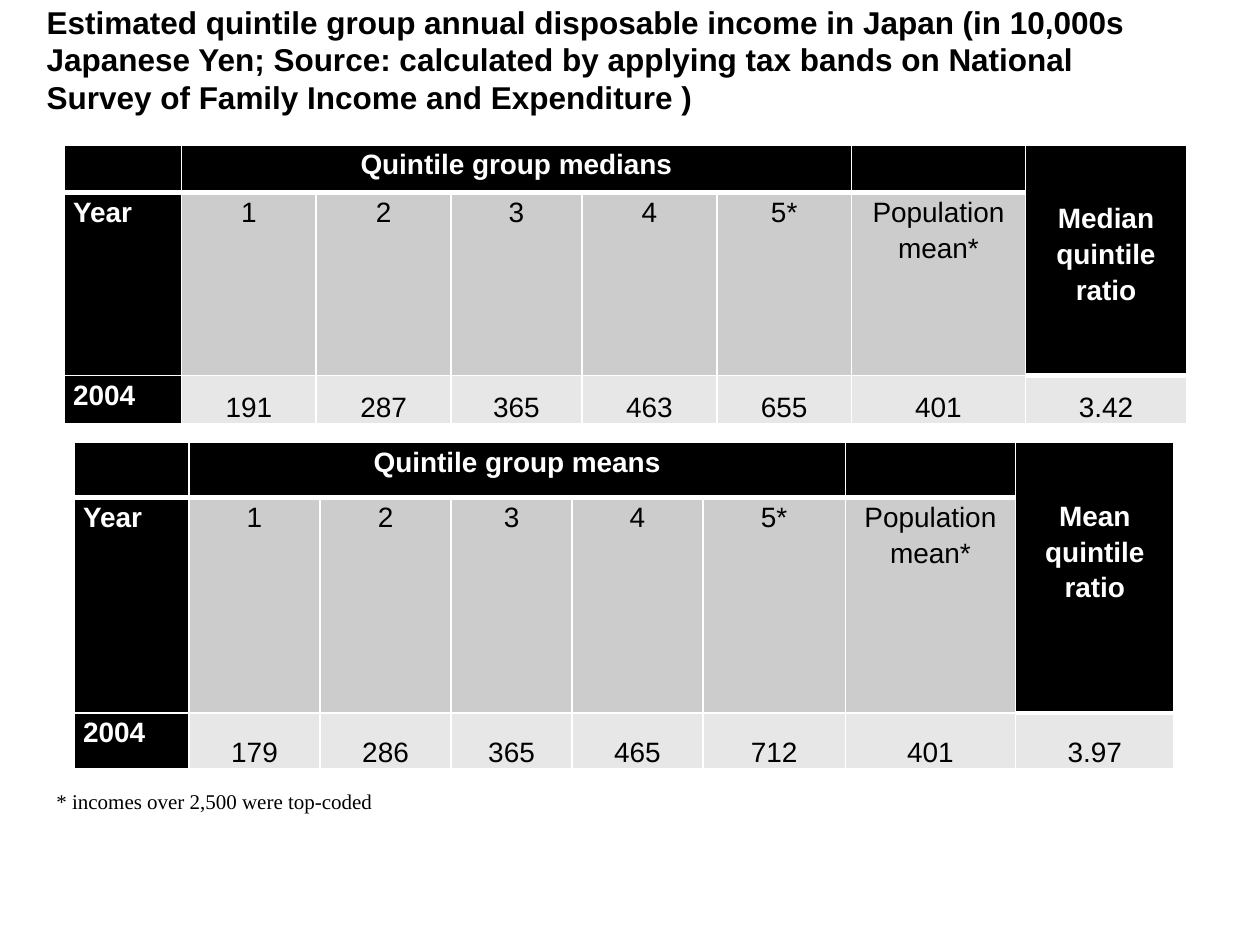
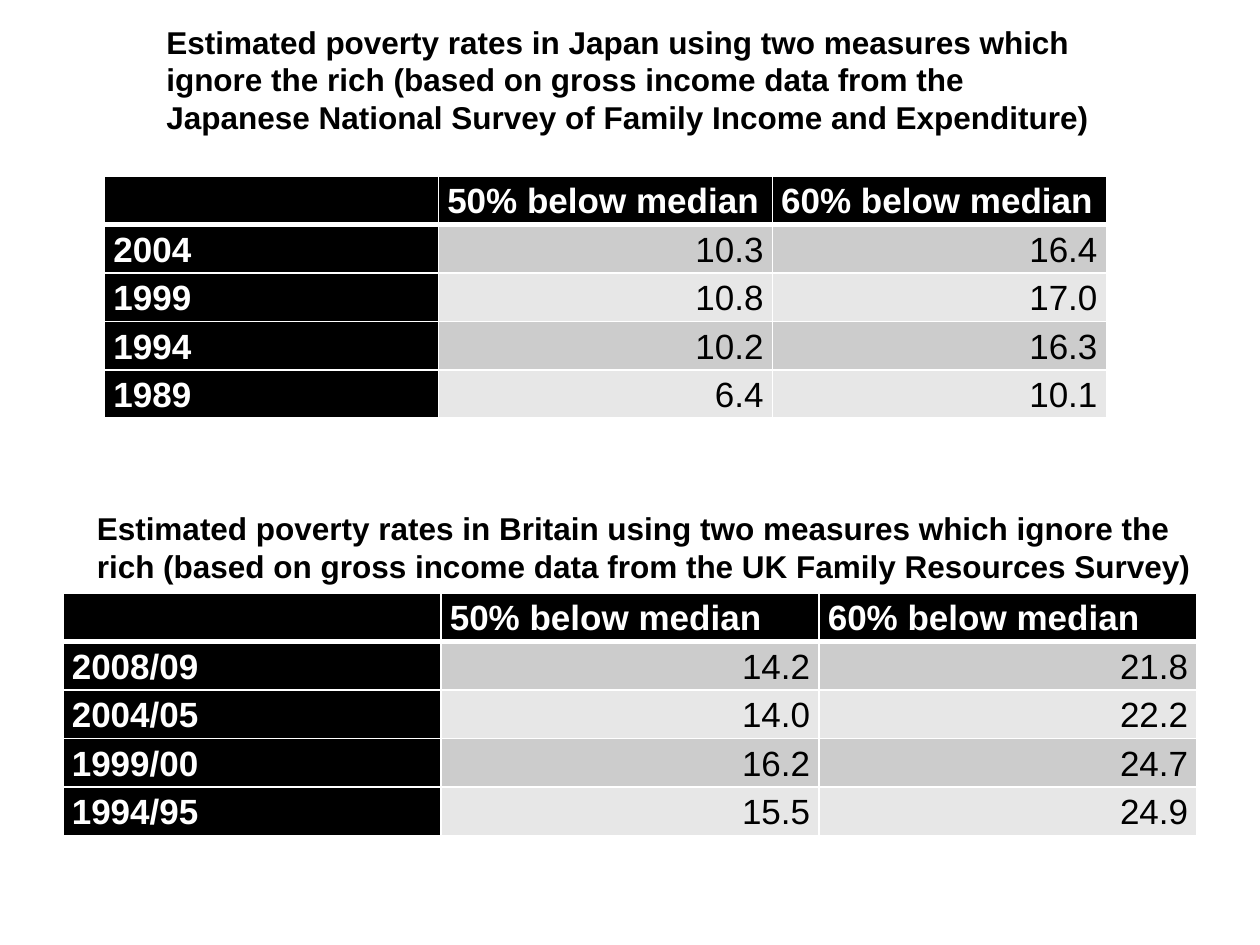
from lxml import etree
from pptx import Presentation
from pptx.dml.color import RGBColor
from pptx.enum import text
from pptx.oxml import ns
from pptx.util import Inches, Pt

BLACK = RGBColor(0x00, 0x00, 0x00)
WHITE = RGBColor(0xFF, 0xFF, 0xFF)
MID_GREY = RGBColor(0xCC, 0xCC, 0xCC)
PALE_GREY = RGBColor(0xE7, 0xE7, 0xE7)
LEFT, CENTER, RIGHT = text.PP_ALIGN.LEFT, text.PP_ALIGN.CENTER, text.PP_ALIGN.RIGHT
TOP, MIDDLE, BOTTOM = text.MSO_ANCHOR.TOP, text.MSO_ANCHOR.MIDDLE, text.MSO_ANCHOR.BOTTOM

INCOME_TITLE = (
    "Estimated quintile group annual disposable income in Japan (in 10,000s Japanese Yen; "
    "Source: calculated by applying tax bands on National Survey of Family Income and Expenditure )"
)
INCOME_NOTE = "* incomes over 2,500 were top-coded"
JAPAN_TITLE = (
    "Estimated poverty rates in Japan using two measures which ignore the rich (based on gross "
    "income data from the Japanese National Survey of Family Income and Expenditure)"
)
BRITAIN_TITLE = (
    "Estimated poverty rates in Britain using two measures which ignore the rich (based on gross "
    "income data from the UK Family Resources Survey)"
)

INCOME_COLUMNS = ["Year", "1", "2", "3", "4", "5*", "Population mean*", ""]
INCOME_TABLES = [
    {
        "measure": "Quintile group medians",
        "ratio": "Median quintile ratio",
        "values": ["2004", "191", "287", "365", "463", "655", "401", "3.42"],
        "at": (0.51, 1.15),
        "widths": [0.93, 1.07, 1.07, 1.04, 1.07, 1.07, 1.38, 1.28],
        "heights": [0.38, 1.45, 0.38],
    },
    {
        "measure": "Quintile group means",
        "ratio": "Mean quintile ratio",
        "values": ["2004", "179", "286", "365", "465", "712", "401", "3.97"],
        "at": (0.59, 3.51),
        "widths": [0.91, 1.04, 1.04, 0.96, 1.04, 1.13, 1.35, 1.26],
        "heights": [0.44, 1.71, 0.44],
    },
]

POVERTY_HEADER = ["", "50% below median", "60% below median"]
POVERTY_TABLES = [
    {
        "rows": [
            ("2004", "10.3", "16.4"),
            ("1999", "10.8", "17.0"),
            ("1994", "10.2", "16.3"),
            ("1989", "6.4", "10.1"),
        ],
        "at": (0.83, 1.4),
        "column_width": 2.65,
    },
    {
        "rows": [
            ("2008/09", "14.2", "21.8"),
            ("2004/05", "14.0", "22.2"),
            ("1999/00", "16.2", "24.7"),
            ("1994/95", "15.5", "24.9"),
        ],
        "at": (0.5, 4.71),
        "column_width": 3,
    },
]
POVERTY_ROW_HEIGHT = 0.38


def style_runs(para, size, color, bold, font="Arial"):
    for span in para.runs:
        span.font.name = font
        span.font.size = Pt(size)
        span.font.bold = bold
        span.font.color.rgb = color


def write_box(box, words, at, size=18, bold=True, font="Arial", anchor=TOP, wrap=True):
    box.left, box.top, box.width, box.height = map(Inches, at)
    frame = box.text_frame
    frame.text = words
    frame.word_wrap = wrap
    frame.auto_size = text.MSO_AUTO_SIZE.SHAPE_TO_FIT_TEXT
    frame.vertical_anchor = anchor
    para = frame.paragraphs[0]
    para.alignment = LEFT
    style_runs(para, size, BLACK, bold, font)


def add_text(page, words, at, **style):
    write_box(page.shapes.add_textbox(0, 0, 0, 0), words, at, **style)


def draw_borders(cell, top, bottom):
    properties = cell._tc.get_or_add_tcPr()
    for side, width in (("L", 1), ("R", 1), ("T", top), ("B", bottom)):
        line = etree.SubElement(properties, ns.qn(f"a:ln{side}"), w=str(Pt(width)))
        fill = etree.SubElement(line, ns.qn("a:solidFill"))
        etree.SubElement(fill, ns.qn("a:srgbClr"), val=str(WHITE))


def fill_cell(cell, words, fill, size, align, anchor=TOP, space_after=0, borders=(1, 1)):
    draw_borders(cell, *borders)
    cell.fill.solid()
    cell.fill.fore_color.rgb = fill
    cell.margin_left = cell.margin_right = Inches(0.07)
    cell.margin_top = cell.margin_bottom = 0
    cell.vertical_anchor = anchor
    cell.text_frame.text = words
    para = cell.text_frame.paragraphs[0]
    para.alignment = align
    para.line_spacing = 1.15
    para.space_after = Pt(space_after)
    dark = fill == BLACK
    style_runs(para, size, WHITE if dark else BLACK, dark)


def add_grid(page, at, widths, heights):
    size = (sum(widths), sum(heights))
    frame = page.shapes.add_table(len(heights), len(widths), *map(Inches, at + size))
    grid = frame.table
    for column, width in zip(grid.columns, widths):
        column.width = Inches(width)
    for row, height in zip(grid.rows, heights):
        row.height = Inches(height)
    return grid


def add_income_table(page, data):
    grid = add_grid(page, data["at"], data["widths"], data["heights"])
    last = len(INCOME_COLUMNS) - 1
    header = ["", data["measure"], "", "", "", "", "", data["ratio"]]
    for r, row in enumerate([header, INCOME_COLUMNS, data["values"]]):
        for c, words in enumerate(row):
            header_end = 1 if c == last else 0
            dark = r <= header_end or c == 0
            fill_cell(
                grid.cell(r, c),
                words,
                BLACK if dark else (MID_GREY, PALE_GREY)[r - 1],
                size=16,
                align=LEFT if c == 0 else CENTER,
                anchor=BOTTOM if r == 2 and c else TOP,
                space_after=10,
                borders=(3 if r == header_end + 1 else 1, 3 if r <= header_end else 1),
            )
    grid.cell(0, 1).merge(grid.cell(0, 5))
    grid.cell(0, last).merge(grid.cell(1, last))
    grid.cell(0, last).margin_top = Inches(0.43)


def add_poverty_table(page, data):
    rows = [POVERTY_HEADER] + data["rows"]
    widths = [data["column_width"]] * len(POVERTY_HEADER)
    grid = add_grid(page, data["at"], widths, [POVERTY_ROW_HEIGHT] * len(rows))
    for r, row in enumerate(rows):
        for c, words in enumerate(row):
            dark = r == 0 or c == 0
            fill_cell(
                grid.cell(r, c),
                words,
                BLACK if dark else (PALE_GREY, MID_GREY)[r % 2],
                size=20,
                align=LEFT if dark else RIGHT,
                borders=(3 if r == 1 else 1, 3 if r == 0 else 1),
            )


def add_page(deck, title, at):
    page = deck.slides.add_slide(deck.slide_layouts.get_by_name("Title Only"))
    write_box(page.shapes.title, title, at)
    return page


def main():
    deck = Presentation()
    deck.slide_width, deck.slide_height = Inches(10), Inches(7.5)

    income = add_page(deck, INCOME_TITLE, (0.27, -0.03, 8.98, 1.01))
    for data in INCOME_TABLES:
        add_income_table(income, data)
    add_text(income, INCOME_NOTE, (0.35, 6.11, 10, 0.5), size=12, bold=False,
             font="Times New Roman", anchor=MIDDLE, wrap=False)

    poverty = add_page(deck, JAPAN_TITLE, (1.22, 0.13, 7.56, 1))
    for data in POVERTY_TABLES:
        add_poverty_table(poverty, data)
    add_text(poverty, BRITAIN_TITLE, (0.67, 3.99, 8.9, 0.7))

    deck.save("out.pptx")


if __name__ == "__main__":
    main()
